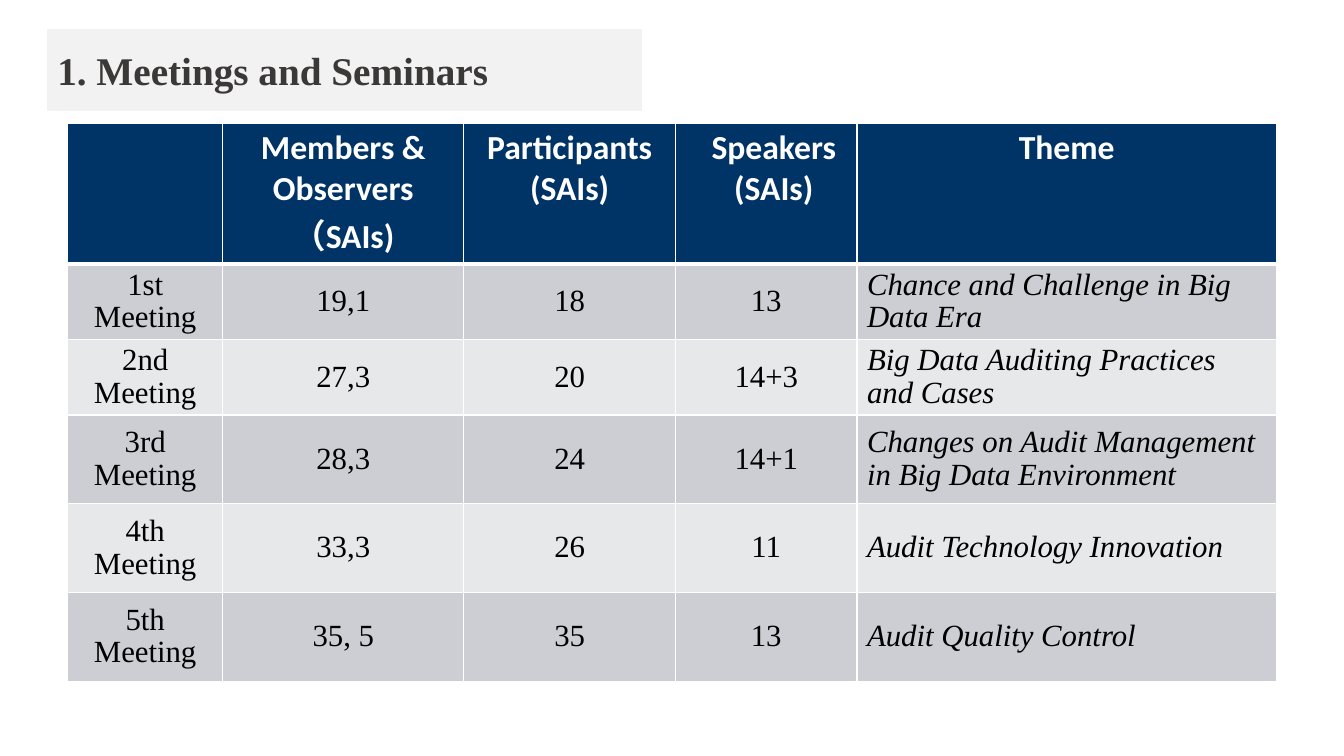
from dataclasses import dataclass

from lxml import etree
from pptx import Presentation, util as u
from pptx.dml.color import RGBColor
from pptx.enum import shapes, text
from pptx.oxml import ns


@dataclass(frozen=True)
class Theme:
    navy: str = "003366"
    white: str = "FFFFFF"
    black: str = "000000"
    gray: str = "3B3838"
    panel: str = "F2F2F2"
    bands: tuple = ("CCCED3", "E7E8EA")
    sans: str = "Calibri"
    serif: str = "Times New Roman"
    title: int = 28
    head: int = 24
    body: int = 22


HEADS = ["", "Members &\nObservers\n（SAIs)", "Participants\n(SAIs)",
         "Speakers\n(SAIs)", "Theme"]
ROWS = [
    ["1st Meeting", "19,1", "18", "13", "Chance and Challenge in Big Data Era"],
    ["2nd Meeting", "27,3", "20", "14+3", "Big Data Auditing Practices and Cases"],
    ["3rd Meeting", "28,3", "24", "14+1",
     "Changes on Audit Management in Big Data Environment"],
    ["4th Meeting", "33,3", "26", "11", "Audit Technology Innovation"],
    ["5th\nMeeting", "35, 5", "35", "13", "Audit Quality Control"],
]
WIDTHS = [1.54, 2.39, 2.1, 1.8, 4.16]
HEIGHTS = [1.21, 0.65, 0.65, 0.88, 0.88, 0.88]
THEME = len(WIDTHS) - 1
SPEAKERS = 3


class Deck:
    def __init__(self, theme):
        self.theme = theme
        self.prs = Presentation()
        self.prs.slide_width = u.Inches(13.33)
        self.prs.slide_height = u.Inches(7.5)
        self.slide = self.prs.slides.add_slide(self.prs.slide_layouts[6])

    def label(self, frame, words, color, align, space=None, **fmt):
        frame.word_wrap = True
        for i, line in enumerate(words.split("\n")):
            para = frame.paragraphs[0] if i == 0 else frame.add_paragraph()
            para.alignment = align
            para.line_spacing = space
            if not line:
                continue
            run = para.add_run()
            run.text = line
            for key, val in fmt.items():
                setattr(run.font, key, val)
            run.font.color.rgb = RGBColor.from_string(color)

    def panel(self, box, words):
        t = self.theme
        shape = self.slide.shapes.add_shape(
            shapes.MSO_SHAPE.RECTANGLE, *map(u.Inches, box))
        shape.shadow.inherit = False
        shape.fill.solid()
        shape.fill.fore_color.rgb = RGBColor.from_string(t.panel)
        shape.line.color.rgb = RGBColor.from_string(t.panel)
        shape.line.width = u.Pt(1)
        shape.text_frame.vertical_anchor = text.MSO_ANCHOR.MIDDLE
        self.label(shape.text_frame, words, t.gray, text.PP_ALIGN.LEFT,
                   name=t.serif, size=u.Pt(t.title), bold=True)

    def edge(self, cell, side, width):
        props = cell._tc.get_or_add_tcPr()
        line = etree.SubElement(props, ns.qn(f"a:ln{side}"), w=str(u.Pt(width)))
        fill = etree.SubElement(line, ns.qn("a:solidFill"))
        etree.SubElement(fill, ns.qn("a:srgbClr"), val=self.theme.white)

    def cell(self, cell, words, row, col):
        t = self.theme
        head = row == 0
        # Borders: heavier rule between header and body
        for side in "LRTB":
            heavy = (head and side == "B") or (row == 1 and side == "T")
            self.edge(cell, side, 3 if heavy else 1)
        cell.fill.solid()
        back = t.navy if head else t.bands[(row - 1) % 2]
        cell.fill.fore_color.rgb = RGBColor.from_string(back)
        # Text
        if head:
            if col == SPEAKERS:
                cell.margin_left = u.Inches(0.25)
            self.label(cell.text_frame, words, t.white, text.PP_ALIGN.CENTER,
                       name=t.sans, size=u.Pt(t.head), bold=True)
        else:
            cell.vertical_anchor = text.MSO_ANCHOR.MIDDLE
            last = col == THEME
            align = text.PP_ALIGN.LEFT if last else text.PP_ALIGN.CENTER
            self.label(cell.text_frame, words, t.black, align, 0.96,
                       name=t.serif, size=u.Pt(t.body), bold=False, italic=last)

    def table(self, left, top, widths, heights, rows):
        box = (left, top, sum(widths), sum(heights))
        grid = self.slide.shapes.add_table(
            len(heights), len(widths), *map(u.Inches, box)).table
        for col, width in zip(grid.columns, widths):
            col.width = u.Inches(width)
        for row, height in zip(grid.rows, heights):
            row.height = u.Inches(height)
        for r, row in enumerate(rows):
            for c, words in enumerate(row):
                self.cell(grid.cell(r, c), words, r, c)


def main():
    deck = Deck(Theme())
    # Meeting figures
    deck.table(0.67, 1.22, WIDTHS, HEIGHTS, [HEADS] + ROWS)
    # Heading
    deck.panel((0.47, 0.29, 5.89, 0.8), "1. Meetings and Seminars")
    deck.prs.save("out.pptx")


if __name__ == "__main__":
    main()
